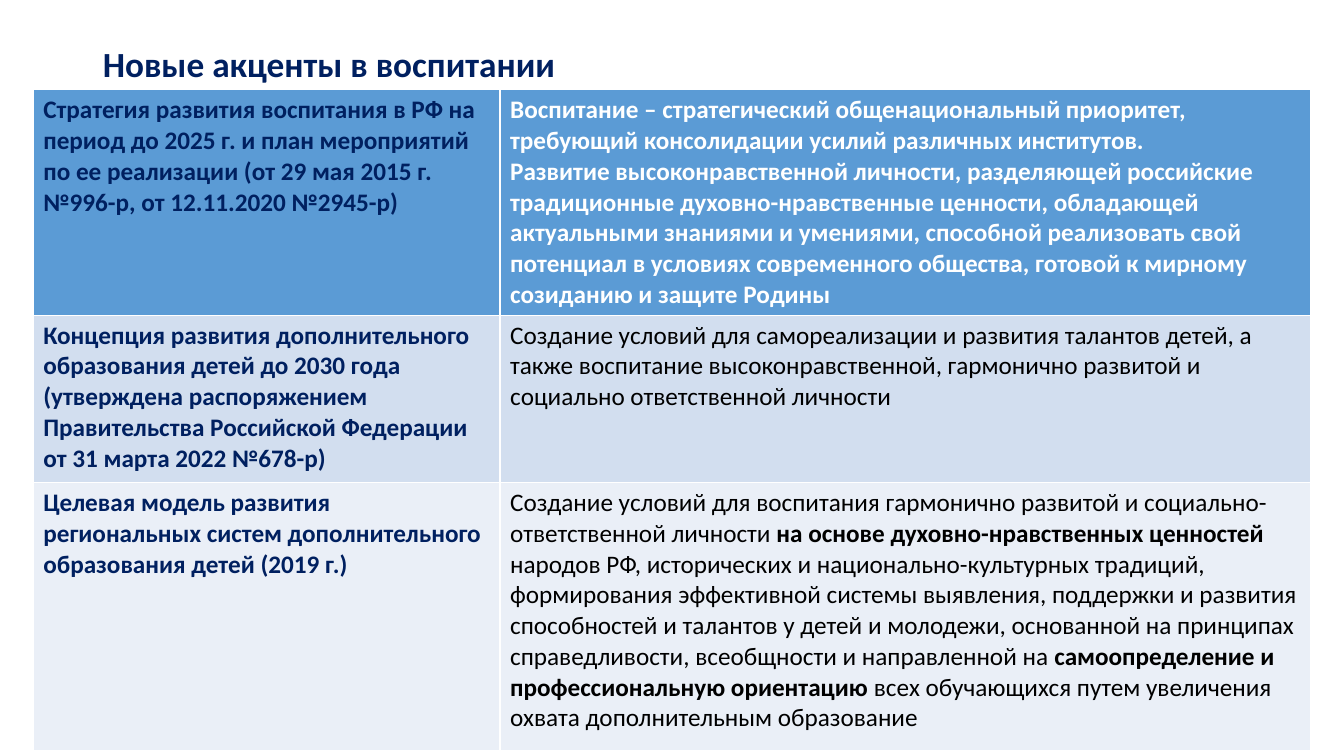
import pptx
import pptx.dml.color
import pptx.enum.text
import pptx.util

RGBColor = pptx.dml.color.RGBColor
NAVY = RGBColor(0x00, 0x20, 0x60)
WHITE = RGBColor(0xFF, 0xFF, 0xFF)
BLACK = RGBColor(0x00, 0x00, 0x00)
ROW_FILLS = [
    RGBColor(0x5B, 0x9B, 0xD5),
    RGBColor(0xD2, 0xDE, 0xEF),
    RGBColor(0xEA, 0xEF, 0xF7),
]

SLIDE_WIDTH = pptx.util.Inches(13.33)
SLIDE_HEIGHT = pptx.util.Inches(7.5)
TABLE_LEFT, TABLE_TOP = 0.33, 0.89
COLUMN_WIDTHS = [4.63, 8.04]
ROW_HEIGHTS = [2.22, 1.66, 2.66]

TITLE = "Новые акценты в воспитании"
DOCUMENTS = [
    "Стратегия развития воспитания в РФ на период до 2025 г. и план мероприятий "
    "по ее реализации (от 29 мая 2015 г. №996-р, от 12.11.2020 №2945-р)",
    "Концепция развития дополнительного образования детей до 2030 года (утверждена "
    "распоряжением Правительства Российской Федерации от 31 марта 2022 №678-р)",
    "Целевая модель развития региональных систем дополнительного образования детей (2019 г.)",
]
# Each accent is a list of paragraphs; each paragraph is a list of (text, bold) runs.
ACCENTS = [
    [
        [("Воспитание – стратегический общенациональный приоритет, требующий "
          "консолидации усилий различных институтов.", True)],
        [("Развитие высоконравственной личности, разделяющей российские "
          "традиционные духовно-нравственные ценности, обладающей актуальными "
          "знаниями и умениями, способной реализовать свой потенциал в условиях "
          "современного общества, готовой к мирному созиданию и защите Родины", True)],
    ],
    [
        [("Создание условий для самореализации и развития талантов детей, а также "
          "воспитание высоконравственной, гармонично развитой и социально "
          "ответственной личности", False)],
    ],
    [
        [("Создание условий для воспитания гармонично развитой и "
          "социально-ответственной личности ", False),
         ("на основе духовно-нравственных ценностей ", True),
         ("народов РФ, исторических и национально-культурных традиций, формирования "
          "эффективной системы выявления, поддержки и развития способностей и "
          "талантов у детей и молодежи, основанной на принципах справедливости, "
          "всеобщности и направленной на ", False),
         ("самоопределение и профессиональную ориентацию ", True),
         ("всех обучающихся путем увеличения охвата дополнительным образование", False)],
    ],
]
ACCENT_COLORS = [WHITE, BLACK, BLACK]


def write_text(text_frame, paragraphs, size=18, color=BLACK, line_spacing=1.0):
    """Fill a text frame with paragraphs made of (text, bold) runs."""
    for index, runs in enumerate(paragraphs):
        paragraph = text_frame.paragraphs[0] if index == 0 else text_frame.add_paragraph()
        paragraph.alignment = pptx.enum.text.PP_ALIGN.LEFT
        paragraph.line_spacing = line_spacing
        for text, bold in runs:
            run = paragraph.add_run()
            run.text = text
            run.font.name = "Calibri"
            run.font.size = pptx.util.Pt(size)
            run.font.bold = bold
            run.font.color.rgb = color


def format_title(title):
    title.left, title.top = pptx.util.Inches(0.92), pptx.util.Inches(0.4)
    title.width, title.height = pptx.util.Inches(11.5), pptx.util.Inches(0.51)
    title.text_frame.auto_size = pptx.enum.text.MSO_AUTO_SIZE.NONE
    title.text_frame.vertical_anchor = pptx.enum.text.MSO_ANCHOR.MIDDLE
    write_text(title.text_frame, [[(TITLE, True)]], size=25.2, color=NAVY, line_spacing=0.9)


def fill_cell(cell, paragraphs, fill, color):
    cell.fill.solid()
    cell.fill.fore_color.rgb = fill
    write_text(cell.text_frame, paragraphs, color=color)


def add_accents_table(slide):
    frame = slide.shapes.add_table(
        len(ROW_HEIGHTS), len(COLUMN_WIDTHS),
        pptx.util.Inches(TABLE_LEFT), pptx.util.Inches(TABLE_TOP),
        pptx.util.Inches(sum(COLUMN_WIDTHS)), pptx.util.Inches(sum(ROW_HEIGHTS)),
    )
    table = frame.table
    for column, width in zip(table.columns, COLUMN_WIDTHS):
        column.width = pptx.util.Inches(width)
    for index, (row, height) in enumerate(zip(table.rows, ROW_HEIGHTS)):
        row.height = pptx.util.Inches(height)
        fill = ROW_FILLS[index]
        fill_cell(row.cells[0], [[(DOCUMENTS[index], True)]], fill, NAVY)
        fill_cell(row.cells[1], ACCENTS[index], fill, ACCENT_COLORS[index])


def main():
    presentation = pptx.Presentation()
    presentation.slide_width = SLIDE_WIDTH
    presentation.slide_height = SLIDE_HEIGHT
    slide = presentation.slides.add_slide(presentation.slide_layouts[5])
    format_title(slide.shapes.title)
    add_accents_table(slide)
    presentation.save("out.pptx")


if __name__ == "__main__":
    main()
